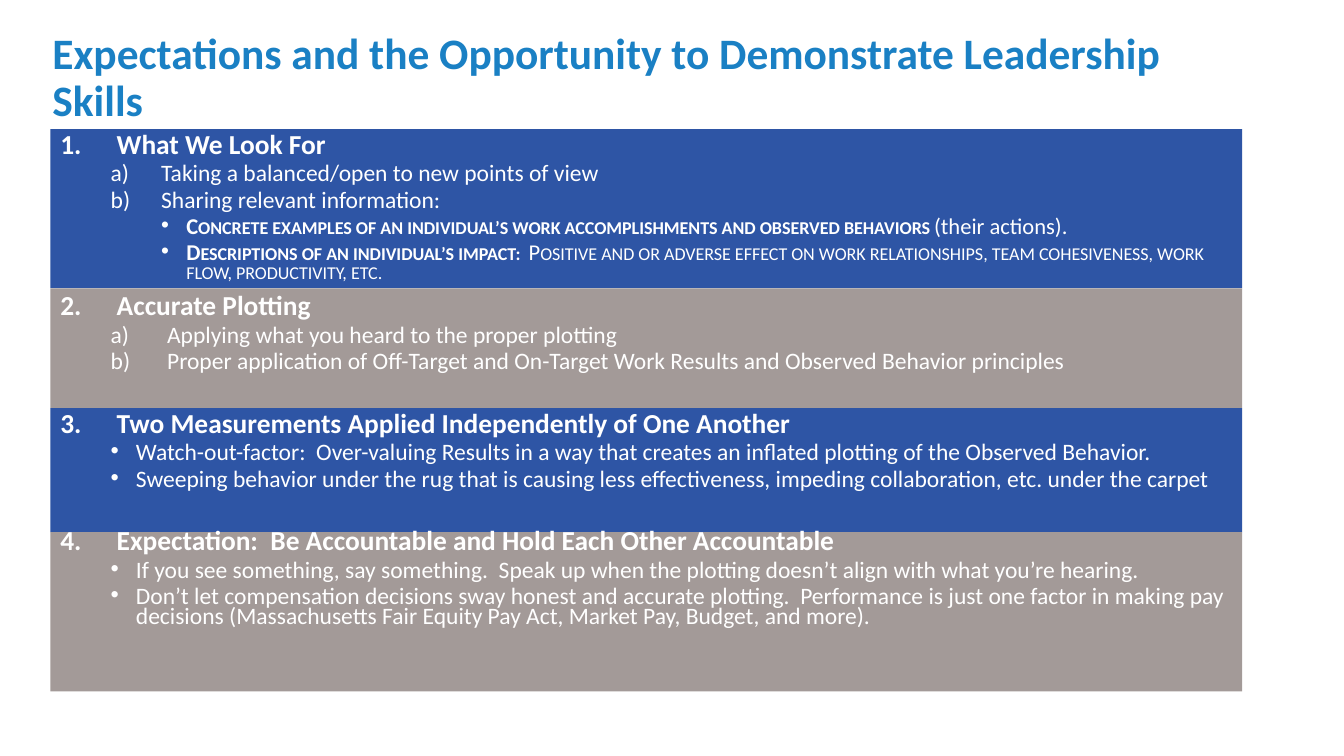
from itertools import cycle, pairwise

from lxml import etree
from pptx import Presentation
from pptx import util as u
from pptx.dml.color import RGBColor
from pptx.enum import shapes, text
from pptx.oxml.ns import qn

BLUE, GREY, SKY, WHITE = "2E55A5", "A39A98", "1A80C4", "FFFFFF"
LEFT, WIDE = 3.75, 88.67  # percent of the slide's width
EDGES = 17.07, 38.13, 54, 70.4, 91.47  # percent of the slide's height


def hue(code):
    return RGBColor.from_string(code)


def write(para, words, size=16.8, color=WHITE, bold=False, small=False):
    """Add a run of text with its format."""
    run = para.add_run()
    run.text = words
    font = run.font
    font.name, font.size, font.bold = "Calibri", u.Pt(size), bold
    font.color.rgb = hue(color)
    if small:
        run._r.get_or_add_rPr().set("cap", "small")


def mark(para, sign, left, hang):
    """Give a paragraph a hanging bullet or an automatic number."""
    props = para._p.get_or_add_pPr()
    props.set("marL", str(u.Inches(left)))
    props.set("indent", str(-u.Inches(hang)))
    if sign == "•":
        etree.SubElement(props, qn("a:buFont"), typeface="Arial")
        etree.SubElement(props, qn("a:buChar"), char=sign)
    else:
        etree.SubElement(props, qn("a:buFont"), typeface="+mj-lt")
        etree.SubElement(props, qn("a:buAutoNum"), type=sign)


class Deck:
    def __init__(self):
        self.show = Presentation()
        self.show.slide_width = u.Inches(13.33)
        self.show.slide_height = u.Inches(7.5)
        self.slide = self.show.slides.add_slide(self.show.slide_layouts[5])

    def box(self, left, top, width, height):
        """Turn percentages of the slide into lengths."""
        wide, high = self.show.slide_width, self.show.slide_height
        return [u.Emu(round(part * full / 100)) for part, full in
                ((left, wide), (top, high), (width, wide), (height, high))]

    def title(self, words, *place):
        head = self.slide.shapes.title
        head.left, head.top, head.width, head.height = self.box(*place)
        frame = head.text_frame
        frame.word_wrap = True
        frame.auto_size = text.MSO_AUTO_SIZE.NONE
        frame.vertical_anchor = text.MSO_ANCHOR.TOP
        frame.margin_top = u.Inches(0.02)
        para = frame.paragraphs[0]
        para.alignment = text.PP_ALIGN.LEFT
        para.line_spacing = 0.9
        write(para, words, size=31, color=SKY, bold=True)

    def band(self, color, *place):
        rect = self.slide.shapes.add_shape(
            shapes.MSO_SHAPE.RECTANGLE, *self.box(*place))
        rect.shadow.inherit = False
        rect.fill.solid()
        rect.fill.fore_color.rgb = hue(color)
        rect.line.fill.background()

    def outline(self, parts, *place):
        """Write numbered headings, each with its list of points."""
        frame = self.slide.shapes.add_textbox(*self.box(*place)).text_frame
        frame.word_wrap = True
        first = frame.paragraphs[0]
        for head, gap, points in parts:
            para = first if head == parts[0][0] else frame.add_paragraph()
            para.line_spacing, para.space_before = 0.7, u.Pt(gap)
            mark(para, "arabicPeriod", 0.56, 0.56)
            write(para, head, size=19.6, bold=True)
            for (level, *look), runs in points:
                para = frame.add_paragraph()
                para.level = level
                para.line_spacing, para.space_before = 0.7, u.Pt(5)
                mark(para, *look)
                for words, style in runs:
                    write(para, words, **style)


# Point styles: level, sign, left indent, hang
NEAR = 1, "alphaLcParenR", 1, 0.5
FAR = 1, "alphaLcParenR", 1.06, 0.56
DOT = 1, "•", 0.75, 0.25
DEEP = 2, "•", 1.25, 0.25

PLAIN = {}
NOTE = {"size": 16.1}
CAPS = {"size": 16.1, "small": True}
STRONG = {**CAPS, "bold": True}

# Heading, space before it, points
PARTS = [
    ("What We Look For", 10, [
        (NEAR, [("Taking a balanced/open to new points of view", PLAIN)]),
        (NEAR, [("Sharing relevant information:", PLAIN)]),
        (DEEP, [("Concrete examples of an individual’s work accomplishments "
                 "and observed behaviors ", STRONG),
                ("(their actions).", NOTE)]),
        (DEEP, [("Descriptions of an individual’s impact:  ", STRONG),
                ("Positive and or adverse effect on work relationships, team "
                 "cohesiveness, work flow, productivity, etc.", CAPS)]),
    ]),
    ("Accurate Plotting", 10, [
        (FAR, [("Applying what you heard to the proper plotting", PLAIN)]),
        (FAR, [("Proper application of Off-Target and On-Target Work Results "
                "and Observed Behavior principles", PLAIN)]),
    ]),
    ("Two Measurements Applied Independently of One Another", 29.35, [
        (DOT, [("Watch-out-factor:  Over-valuing Results in a way that "
                "creates an inflated plotting of the Observed Behavior.",
                PLAIN)]),
        (DOT, [("Sweeping behavior under the rug that is causing less "
                "effectiveness, impeding collaboration, etc. under the carpet",
                PLAIN)]),
    ]),
    ("Expectation:  Be Accountable and Hold Each Other Accountable", 29.35, [
        (DOT, [("If you see something, say something.  Speak up when the "
                "plotting doesn’t align with what you’re hearing.", PLAIN)]),
        (DOT, [("Don’t let compensation decisions sway honest and accurate "
                "plotting.  Performance is just one factor in making pay "
                "decisions (Massachusetts Fair Equity Pay Act, Market Pay, "
                "Budget, and more).", PLAIN)]),
    ]),
]


def main():
    deck = Deck()
    # Coloured bands behind the four parts
    for color, (top, end) in zip(cycle((BLUE, GREY)), pairwise(EDGES)):
        deck.band(color, LEFT, top, WIDE, end - top)
    # Title and outline
    deck.title("Expectations and the Opportunity to Demonstrate Leadership "
               "Skills", 3.15, 4, 89.2, 19.33)
    deck.outline(PARTS, LEFT, 17.33, WIDE, 70.8)
    deck.show.save("out.pptx")


if __name__ == "__main__":
    main()
